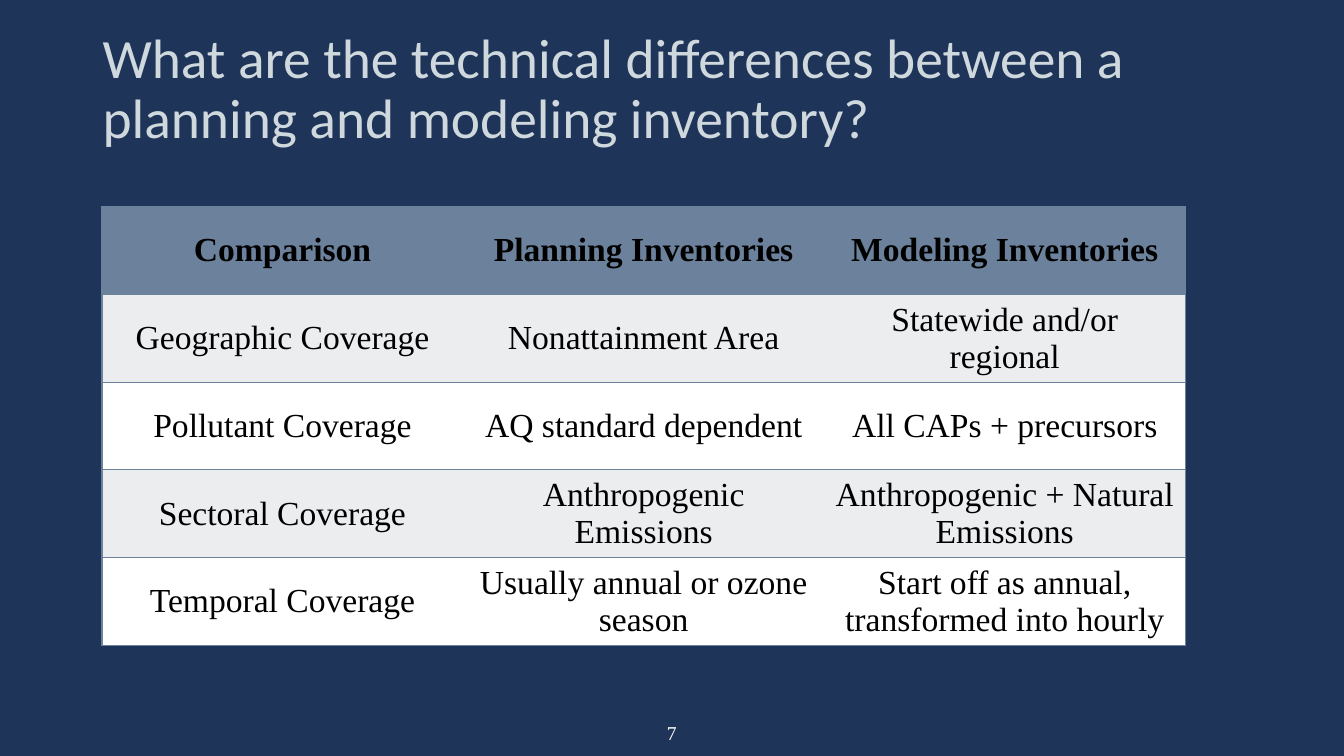
from lxml.etree import SubElement
from pptx import Presentation
from pptx.dml.color import RGBColor
from pptx.enum.text import MSO_ANCHOR, MSO_AUTO_SIZE, PP_ALIGN
from pptx.oxml.ns import qn
from pptx.util import Cm, Pt

HEADING = "What are the technical differences between a planning and modeling inventory?"
PAGE_NUMBER = "7"
COMPARISON = [
    ("Comparison", "Planning Inventories", "Modeling Inventories"),
    ("Geographic Coverage", "Nonattainment Area", "Statewide and/or regional"),
    ("Pollutant Coverage", "AQ standard dependent", "All CAPs + precursors"),
    ("Sectoral Coverage", "Anthropogenic Emissions", "Anthropogenic + Natural Emissions"),
    ("Temporal Coverage", "Usually annual or ozone season",
     "Start off as annual, transformed into hourly"),
]

NAVY = RGBColor(0x1F, 0x34, 0x59)
PALE = RGBColor(0xCF, 0xD9, 0xDD)
STEEL = RGBColor(0x6C, 0x82, 0x9C)
MIST = RGBColor(0xEB, 0xED, 0xEF)
WHITE = RGBColor(0xFF, 0xFF, 0xFF)
BLACK = RGBColor(0, 0, 0)
SERIF = "Times New Roman"
COLUMN_WIDTH = Cm(9.1)
ROW_HEIGHT = Cm(2.21)


def style(paragraph, name, size, color, bold=False, align=PP_ALIGN.CENTER):
    paragraph.alignment = align
    font = paragraph.font
    font.name, font.size, font.bold = name, Pt(size), bold
    font.color.rgb = color


def set_borders(cell, drawn):
    properties = cell._tc.get_or_add_tcPr()
    for position, side in enumerate(("L", "R", "T", "B")):
        border = properties.makeelement(qn(f"a:ln{side}"), {"w": str(Pt(1))})
        properties.insert(position, border)
        if side in drawn:
            fill = SubElement(border, qn("a:solidFill"))
            SubElement(fill, qn("a:srgbClr"), val=str(STEEL))
        else:
            SubElement(border, qn("a:noFill"))


def add_heading(slide):
    heading = slide.shapes.title
    heading.left, heading.top, heading.width, heading.height = (
        Cm(2.33), Cm(1.02), Cm(29.21), Cm(2.54))
    frame = heading.text_frame
    frame.text = HEADING
    frame.word_wrap = True
    frame.auto_size = MSO_AUTO_SIZE.NONE
    frame.vertical_anchor = MSO_ANCHOR.MIDDLE
    frame.paragraphs[0].line_spacing = 0.9
    style(frame.paragraphs[0], "Calibri", 39.6, PALE, align=PP_ALIGN.LEFT)


def add_comparison(slide):
    rows, columns = len(COMPARISON), len(COMPARISON[0])
    table = slide.shapes.add_table(
        rows, columns, Cm(2.57), Cm(5.21),
        COLUMN_WIDTH * columns, ROW_HEIGHT * rows).table
    for column in table.columns:
        column.width = COLUMN_WIDTH
    for r, entries in enumerate(COMPARISON):
        table.rows[r].height = ROW_HEIGHT
        for c, entry in enumerate(entries):
            cell = table.cell(r, c)
            cell.text = entry
            cell.vertical_anchor = MSO_ANCHOR.MIDDLE
            cell.fill.solid()
            cell.fill.fore_color.rgb = STEEL if r == 0 else MIST if r % 2 else WHITE
            style(cell.text_frame.paragraphs[0], SERIF, 24, BLACK, bold=r == 0)
            outer = {0: "L", columns - 1: "R"}.get(c, "")
            set_borders(cell, "TB" + outer)


def add_page_number(slide):
    frame = slide.shapes.add_textbox(Cm(15.9), Cm(18.03), Cm(2.06), Cm(0.86)).text_frame
    frame.word_wrap = True
    frame.text = PAGE_NUMBER
    style(frame.paragraphs[0], SERIF, 14, WHITE)


def main():
    deck = Presentation()
    deck.slide_width, deck.slide_height = Cm(33.87), Cm(19.05)
    slide = deck.slides.add_slide(deck.slide_layouts[5])
    slide.background.fill.solid()
    slide.background.fill.fore_color.rgb = NAVY
    add_heading(slide)
    add_comparison(slide)
    add_page_number(slide)
    deck.save("out.pptx")


if __name__ == "__main__":
    main()
